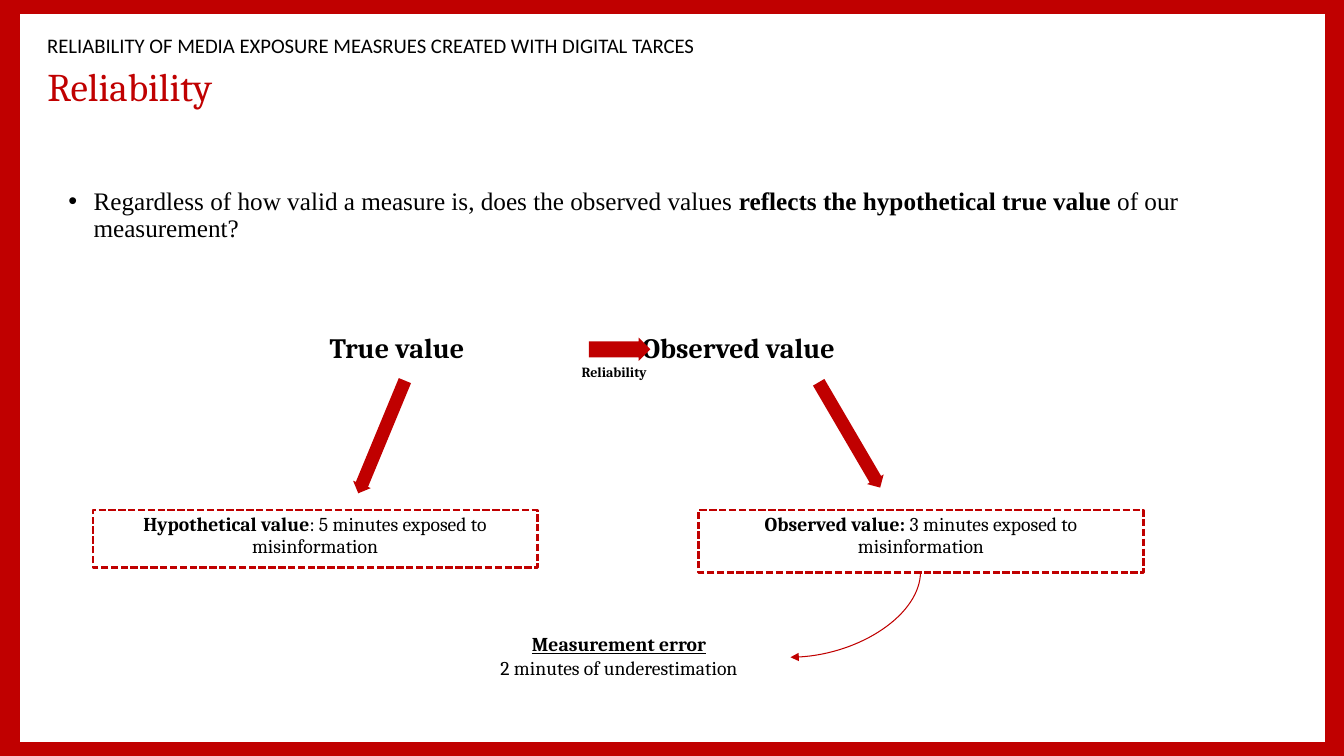
from lxml.etree import SubElement
from pptx import Presentation
from pptx.dml.color import RGBColor
from pptx.enum.dml import MSO_LINE
from pptx.enum.shapes import MSO_CONNECTOR, MSO_SHAPE
from pptx.enum.text import MSO_ANCHOR, PP_ALIGN
from pptx.oxml.ns import qn
from pptx.util import Inches, Pt

RED, WHITE, BLACK = "C00000", "FFFFFF", "000000"


def color(value):
    return RGBColor.from_string(value)


def box_of(*lengths):
    return [Inches(length) for length in lengths]


def write(paragraph, parts, size, font="Cambria", fill=BLACK, spacing=0.9, align=PP_ALIGN.LEFT):
    """Fill a paragraph with (text, bold, underline) parts."""
    paragraph.alignment = align
    paragraph.line_spacing = spacing
    for text, bold, underline in parts:
        run = paragraph.add_run()
        run.text = text
        run.font.name = font
        run.font.size = Pt(size)
        run.font.bold = bold
        run.font.underline = underline
        run.font.color.rgb = color(fill)


def add_text(slide, box, parts, size, anchor=MSO_ANCHOR.TOP, **style):
    frame = slide.shapes.add_textbox(*box_of(*box)).text_frame
    frame.word_wrap = True
    frame.vertical_anchor = anchor
    write(frame.paragraphs[0], parts, size, **style)
    return frame


def add_shape(slide, kind, box, fill=None):
    shape = slide.shapes.add_shape(kind, *box_of(*box))
    shape.shadow.inherit = False
    shape.line.fill.background()
    if fill:
        shape.fill.solid()
        shape.fill.fore_color.rgb = color(fill)
    else:
        shape.fill.background()
    return shape


def add_frame(slide, left, top, width, height):
    """Red border around a white panel that lies behind everything."""
    slide.background.fill.solid()
    slide.background.fill.fore_color.rgb = color(RED)
    panel = add_shape(slide, MSO_SHAPE.RECTANGLE, (left, top, width, height), WHITE)
    slide.shapes._spTree.insert(2, panel._element)


def add_header(slide, left, top, width):
    add_text(slide, (left, top, width, 0.31),
             [("RELIABILITY OF MEDIA EXPOSURE MEASRUES CREATED WITH DIGITAL TARCES", False, False)],
             14.8, MSO_ANCHOR.MIDDLE, font="Calibri", spacing=0.8)
    title = slide.shapes.title
    title.left, title.top, title.width, title.height = box_of(left, top + 0.33, width, 0.47)
    title.text_frame.vertical_anchor = MSO_ANCHOR.MIDDLE
    write(title.text_frame.paragraphs[0], [("Reliability", False, False)], 28, fill=RED)


def add_question(slide, box):
    parts = [("Regardless of how valid a measure is, does the observed values ", False, False),
             ("reflects the hypothetical true value ", True, False),
             ("of our measurement?", False, False)]
    frame = add_text(slide, box, parts, 18, font="Times New Roman")
    properties = frame.paragraphs[0]._p.get_or_add_pPr()
    properties.set("marL", str(Inches(0.25)))
    properties.set("indent", str(-Inches(0.25)))
    SubElement(properties, qn("a:buFont")).set("typeface", "Arial")
    SubElement(properties, qn("a:buChar")).set("char", "•")


def add_arrow(slide, box, rotation):
    arrow = add_shape(slide, MSO_SHAPE.DOWN_ARROW, box, RED)
    arrow.rotation = rotation
    arrow.adjustments[0] = 0.689
    arrow.adjustments[1] = 0.5


def add_example(slide, box, label, rest):
    rectangle = add_shape(slide, MSO_SHAPE.RECTANGLE, box)
    rectangle.line.color.rgb = color(RED)
    rectangle.line.width = Pt(1.75)
    rectangle.line.dash_style = MSO_LINE.SQUARE_DOT
    frame = rectangle.text_frame
    frame.word_wrap = True
    frame.vertical_anchor = MSO_ANCHOR.TOP
    write(frame.paragraphs[0], [(label, True, False), (rest, False, False)], 14,
          align=PP_ALIGN.CENTER)


def add_curved_arrow(slide, left, top, width, height):
    """Quarter curve, turned by 90 degrees about the middle of its box."""
    connector = slide.shapes.add_connector(
        MSO_CONNECTOR.CURVE, *box_of(left, top, left + width, top + height))
    connector.line.color.rgb = color(RED)
    connector.line.width = Pt(0.75)
    properties = connector._element.spPr
    properties.find(qn("a:xfrm")).set("rot", str(90 * 60000))
    properties.find(qn("a:prstGeom")).set("prst", "curvedConnector2")
    SubElement(properties.find(qn("a:ln")), qn("a:tailEnd")).set("type", "triangle")
    SubElement(properties, qn("a:effectLst"))


def add_comparison(slide, left, top):
    """True value against observed value, with an example below each."""
    add_text(slide, (left + 2.25, top, 1.7, 0.45), [("True value", True, False)], 20)
    add_text(slide, (left + 5.35, top, 2.3, 0.45), [("Observed value", True, False)], 20)
    add_text(slide, (left + 4.75, top + 0.31, 1.41, 0.37), [("Reliability", True, False)], 10)
    add_arrow(slide, (left + 5.11, top - 0.11, 0.23, 0.61), 270)
    add_arrow(slide, (left + 2.77, top + 0.46, 0.19, 1.21), 22.5)
    add_arrow(slide, (left + 7.41, top + 0.44, 0.19, 1.21), 329.7)
    add_example(slide, (left, top + 1.79, 4.41, 0.57),
                "Hypothetical value", ": 5 minutes exposed to misinformation")
    add_example(slide, (left + 6.01, top + 1.79, 4.41, 0.62),
                "Observed value: ", "3 minutes exposed to misinformation")


def add_error(slide, left, top):
    add_curved_arrow(slide, left + 3.48, top - 0.77, 0.85, 1.29)
    frame = add_text(slide, (left, top, 3.12, 0.57), [("Measurement error", True, True)],
                     14, spacing=1.0, align=PP_ALIGN.CENTER)
    write(frame.add_paragraph(), [("2 minutes of underestimation", False, False)],
          14, spacing=1.0, align=PP_ALIGN.CENTER)


def main():
    presentation = Presentation()
    presentation.slide_width, presentation.slide_height = box_of(13.33, 7.5)
    slide = presentation.slides.add_slide(presentation.slide_layouts[5])
    add_frame(slide, 0.2, 0.14, 12.94, 7.22)
    add_header(slide, 0.37, 0.32, 11.67)
    add_question(slide, (0.58, 1.82, 12.17, 0.7))
    add_comparison(slide, 0.92, 3.27)
    add_error(slide, 4.58, 6.22)
    presentation.save("out.pptx")


if __name__ == "__main__":
    main()
